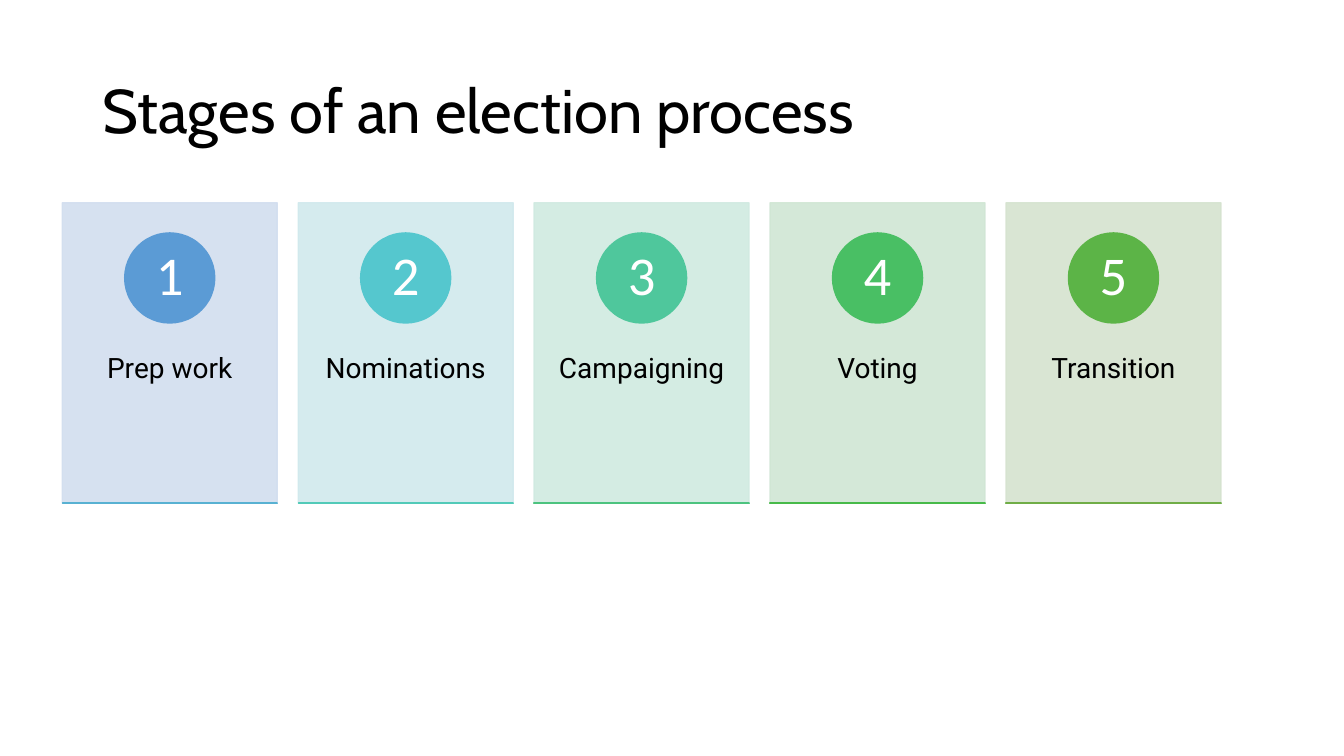
from lxml.etree import SubElement
from pptx import Presentation
from pptx.dml.color import RGBColor
from pptx.enum.shapes import MSO_SHAPE as Preset
from pptx.enum.text import MSO_ANCHOR as Anchor, MSO_AUTO_SIZE as AutoSize, PP_ALIGN as Align
from pptx.oxml.ns import qn
from pptx.util import Cm, Pt

STAGES = [
    ("Prep work", "D2DEEF", "5B9BD5", "58B1D2"),
    ("Nominations", "D1E9ED", "55C7CE", "52CAB8"),
    ("Campaigning", "D0EAE1", "4FC79C", "4CC37F"),
    ("Voting", "D0E6D4", "49BF64", "47BA49"),
    ("Transition", "D5E3CF", "5CB447", "70AD47"),
]


def rgb(color):
    return RGBColor.from_string(color)


def add_filled(slide, preset, left, top, width, height, color, opacity=100):
    shape = slide.shapes.add_shape(preset, Cm(left), Cm(top), Cm(width), Cm(height))
    shape.shadow.inherit = False
    shape.line.width = Pt(1)
    for fill in (shape.fill, shape.line.fill):
        fill.solid()
        fill.fore_color.rgb = rgb(color)
    if opacity < 100:
        for element in shape._element.spPr.iter(qn("a:srgbClr")):
            SubElement(element, qn("a:alpha"), val=str(opacity * 1000))


def format_text(frame, text, font, size, color, align, anchor):
    frame.text = text
    frame.word_wrap = True
    frame.auto_size = AutoSize.NONE
    frame.vertical_anchor = anchor
    paragraph = frame.paragraphs[0]
    paragraph.alignment = align
    paragraph.line_spacing = 0.9
    paragraph.font.name = font
    paragraph.font.size = Pt(size)
    paragraph.font.color.rgb = rgb(color)


def add_label(slide, left, top, width, height, inset_x, inset_y, *text_format):
    frame = slide.shapes.add_textbox(Cm(left), Cm(top), Cm(width), Cm(height)).text_frame
    frame.margin_left = frame.margin_right = Cm(inset_x)
    frame.margin_top = frame.margin_bottom = Cm(inset_y)
    format_text(frame, *text_format)


def place_title(slide, left, top, width, height):
    title = slide.shapes.title
    title.left, title.top, title.width, title.height = map(Cm, (left, top, width, height))
    format_text(title.text_frame, "Stages of an election process",
                "Cabin", 44, "000000", Align.LEFT, Anchor.MIDDLE)


def add_stage(slide, left, top, width, height, number, stage):
    name, card_color, circle_color, base_color = stage
    diameter, number_size = 2.27, 1.61
    circle_top = top + 0.76
    center_x, center_y = left + width / 2, circle_top + diameter / 2

    add_filled(slide, Preset.RECTANGLE, left, top, width, height, card_color, 90)
    add_label(slide, left, top + 2.9, width, 4.55, 0.42, 0.91,
              name, "Roboto", 20, "000000", Align.CENTER, Anchor.TOP)
    add_filled(slide, Preset.OVAL, center_x - diameter / 2, circle_top,
               diameter, diameter, circle_color)
    add_label(slide, center_x - number_size / 2, center_y - number_size / 2,
              number_size, number_size, 0.18, 0.03,
              str(number), "Calibri", 39, "FFFFFF", Align.CENTER, Anchor.MIDDLE)
    add_filled(slide, Preset.RECTANGLE, left, top + height, width, 0, base_color)


def add_stages(slide, left, top, width, height):
    gap = 0.53
    card_width = (width - gap * (len(STAGES) - 1)) / len(STAGES)
    for index, stage in enumerate(STAGES):
        add_stage(slide, left + index * (card_width + gap), top,
                  card_width, height, index + 1, stage)


def main():
    presentation = Presentation()
    presentation.slide_width, presentation.slide_height = Cm(33.87), Cm(19.05)
    slide = presentation.slides.add_slide(presentation.slide_layouts[5])
    place_title(slide, 2.33, 1.02, 27.69, 3.68)
    add_stages(slide, 1.57, 5.11, 29.2, 7.57)
    presentation.save("out.pptx")


if __name__ == "__main__":
    main()
